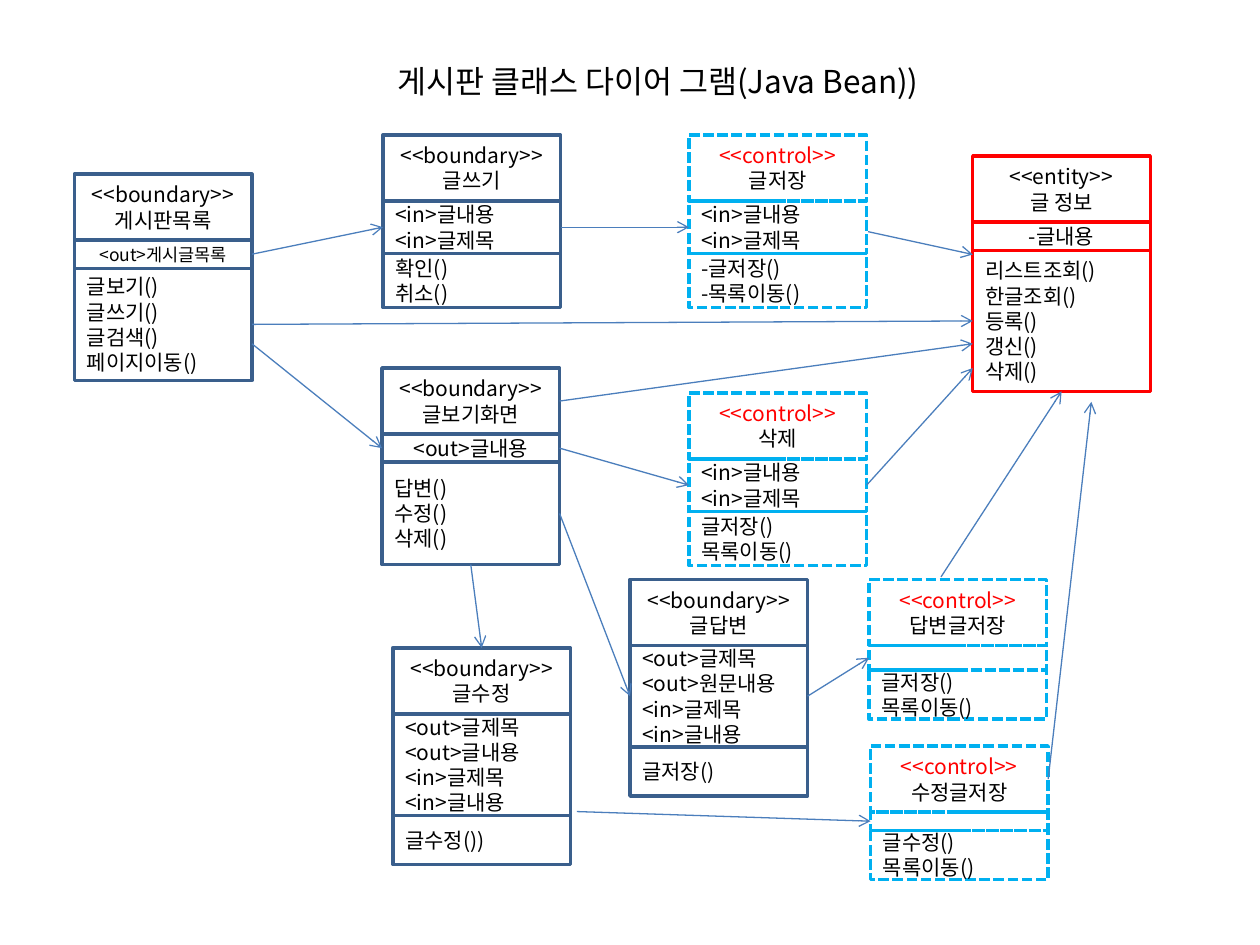
from lxml import etree
from pptx import Presentation
from pptx.dml.color import RGBColor
from pptx.enum.dml import MSO_LINE
from pptx.enum.shapes import MSO_CONNECTOR, MSO_SHAPE
from pptx.enum.text import MSO_ANCHOR, PP_ALIGN
from pptx.oxml.ns import qn
from pptx.util import Cm, Pt

RECT, STRAIGHT = MSO_SHAPE.RECTANGLE, MSO_CONNECTOR.STRAIGHT
LEFT_ALIGN, CENTER, MIDDLE = PP_ALIGN.LEFT, PP_ALIGN.CENTER, MSO_ANCHOR.MIDDLE
DASH = MSO_LINE.SQUARE_DOT
TOP, LEFT, BOTTOM, RIGHT = range(4)

FONT = "Noto Sans CJK KR"
BLACK = RGBColor(0x00, 0x00, 0x00)
RED = RGBColor(0xFF, 0x00, 0x00)
NAVY = RGBColor(0x3A, 0x5F, 0x8C)
CYAN = RGBColor(0x00, 0xB0, 0xF0)
BLUE = RGBColor(0x4B, 0x7E, 0xBC)

BOX_W, HEAD_H, SINGLE_H = 3.58, 1.33, 0.57
STYLES = {
    "boundary": (NAVY, None, BLACK),
    "control": (CYAN, DASH, RED),
    "entity": (RED, None, BLACK),
}
IN_FIELDS = ["<in>글내용", "<in>글제목"]
SAVE_METHODS = ["글저장()", "목록이동()"]

# key: (stereotype, name, left, top, (field height, fields), (method height, methods))
CLASSES = {
    "list": ("boundary", "게시판목록", 1.5, 3.51, (SINGLE_H, ["<out>게시글목록"]),
             (2.26, ["글보기()", "글쓰기()", "글검색()", "페이지이동()"])),
    "view": ("boundary", "글보기화면", 7.7, 7.42, (SINGLE_H, ["<out>글내용"]),
             (2.06, ["답변()", "수정()", "삭제()"])),
    "write": ("boundary", "글쓰기", 7.72, 2.72, (1.06, IN_FIELDS),
              (1.09, ["확인()", "취소()"])),
    "edit": ("boundary", "글수정", 7.92, 13.06,
             (2.05, ["<out>글제목", "<out>글내용", "<in>글제목", "<in>글내용"]),
             (0.99, ["글수정())"])),
    "reply": ("boundary", "글답변", 12.7, 11.68,
              (2.05, ["<out>글제목", "<out>원문내용", "<in>글제목", "<in>글내용"]),
              (0.99, ["글저장()"])),
    "save": ("control", "글저장", 13.89, 2.72, (1.06, IN_FIELDS),
             (1.09, ["-글저장()", "-목록이동()"])),
    "delete": ("control", "삭제", 13.89, 7.92, (1.06, IN_FIELDS),
               (1.09, SAVE_METHODS)),
    "save_reply": ("control", "답변글저장", 17.52, 11.68, (0.5, []),
                   (0.99, SAVE_METHODS)),
    "save_edit": ("control", "수정글저장", 17.55, 15.04, (0.37, []),
                  (0.99, ["글수정()", "목록이동()"])),
    "post": ("entity", "글 정보", 19.61, 3.15, (SINGLE_H, ["-글내용"]),
             (2.84, ["리스트조회()", "한글조회()", "등록()", "갱신()", "삭제()"])),
}

LINKS = [
    (("view", 2, BOTTOM), ("edit", 0, TOP)),
    ((5.08, 6.93), ("view", 1, LEFT)),
    (("write", 1, RIGHT), ("save", 1, LEFT)),
    (("list", 1, RIGHT), ("write", 1, LEFT)),
    (("view", 2, RIGHT), ("reply", 1, LEFT)),
    (("view", 1, RIGHT), ("delete", 1, LEFT)),
    ((11.63, 16.36), ("save_edit", 1, LEFT)),
    (("reply", 1, RIGHT), ("save_reply", 1, LEFT)),
    (("list", 2, RIGHT), ("post", 2, LEFT)),
    (("view", 0, RIGHT), (19.61, 6.93)),
    ((17.5, 4.67), (19.61, 5.13)),
    (("delete", 1, RIGHT), (19.61, 7.42)),
    ((18.97, 11.63), ("post", 2, BOTTOM)),
    (("save_edit", 0, RIGHT), (22, 8.1)),
]


def set_font(p, size, color=BLACK):
    """Give a paragraph its Latin and East Asian font, size and colour."""
    p.font.name, p.font.size = FONT, Pt(size)
    p.font.color.rgb = color
    latin = p._p.find(".//" + qn("a:latin"))
    ea = etree.Element(qn("a:ea"), typeface=FONT)
    latin.addnext(ea)


def add_title(s, text, left, top, width, height):
    """Place the slide title."""
    title = s.shapes.title
    title.left, title.top = Cm(left), Cm(top)
    title.width, title.height = Cm(width), Cm(height)
    tf = title.text_frame
    tf.text, tf.word_wrap, tf.vertical_anchor = text, False, MIDDLE
    p = tf.paragraphs[0]
    p.alignment = LEFT_ALIGN
    set_font(p, 18)


def add_row(group, left, top, height, lines, style, align, size=12, head=False):
    """Draw one compartment of a class box and return it."""
    line_color, dash, head_color = style
    sp = group.shapes.add_shape(RECT, Cm(left), Cm(top), Cm(BOX_W), Cm(height))
    sp.shadow.inherit = False
    sp.fill.background()
    sp.line.color.rgb, sp.line.width = line_color, Pt(2)
    if dash:
        sp.line.dash_style = dash
    tf = sp.text_frame
    tf.vertical_anchor = MIDDLE
    for i, text in enumerate(lines):
        p = tf.paragraphs[0] if i == 0 else tf.add_paragraph()
        p.text, p.alignment = text, align
        set_font(p, size, head_color if head and i == 0 else BLACK)
    return sp


def add_class(s, kind, name, left, top, fields, methods):
    """Draw a class box as a group and return its three compartments."""
    group, style = s.shapes.add_group_shape(), STYLES[kind]
    field_h, field_lines = fields
    method_h, method_lines = methods
    field_align = CENTER if len(field_lines) == 1 else LEFT_ALIGN
    field_size = 10 if name == "게시판목록" else 12
    field_top = top + HEAD_H
    return [
        add_row(group, left, top, HEAD_H, [f"<<{kind}>>", name], style, CENTER, head=True),
        add_row(group, left, field_top, field_h, field_lines, style, field_align, field_size),
        add_row(group, left, field_top + field_h, method_h, method_lines, style, LEFT_ALIGN),
    ]


def end_point(boxes, end):
    """Return the position of a link end in slide units."""
    if len(end) == 2:
        return Cm(end[0]), Cm(end[1])
    key, row, side = end
    sp = boxes[key][row]
    x = sp.left + {LEFT: 0, RIGHT: sp.width}.get(side, sp.width // 2)
    y = sp.top + {TOP: 0, BOTTOM: sp.height}.get(side, sp.height // 2)
    return x, y


def add_link(s, boxes, start, end):
    """Draw an arrow, joined to a compartment wherever an end names one."""
    c = s.shapes.add_connector(STRAIGHT, *end_point(boxes, start), *end_point(boxes, end))
    for target, connect in ((start, c.begin_connect), (end, c.end_connect)):
        if len(target) == 3:
            key, row, side = target
            connect(boxes[key][row], side)
    c.line.color.rgb, c.line.width = BLUE, Pt(0.75)
    etree.SubElement(c.line._get_or_add_ln(), qn("a:tailEnd"), type="arrow")
    etree.SubElement(c._element.spPr, qn("a:effectLst"))


def main():
    """Build the class diagram slide."""
    prs = Presentation()
    prs.slide_width, prs.slide_height = Cm(25.4), Cm(19.05)
    s = prs.slides.add_slide(prs.slide_layouts[5])
    add_title(s, "게시판 클래스 다이어 그램(Java Bean))", 7.75, 1.12, 11.68, 1.02)
    boxes = {key: add_class(s, *parts) for key, parts in CLASSES.items()}
    for start, end in LINKS:
        add_link(s, boxes, start, end)
    prs.save("out.pptx")


if __name__ == "__main__":
    main()
